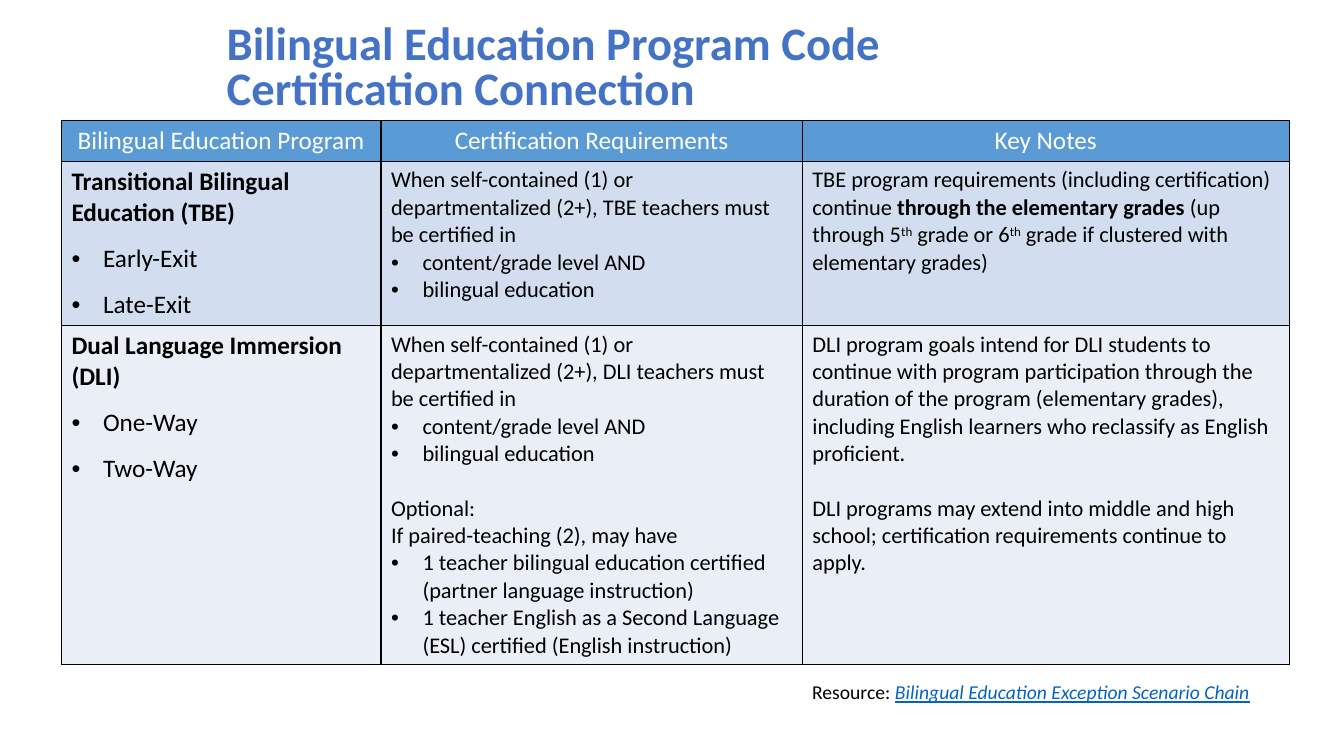
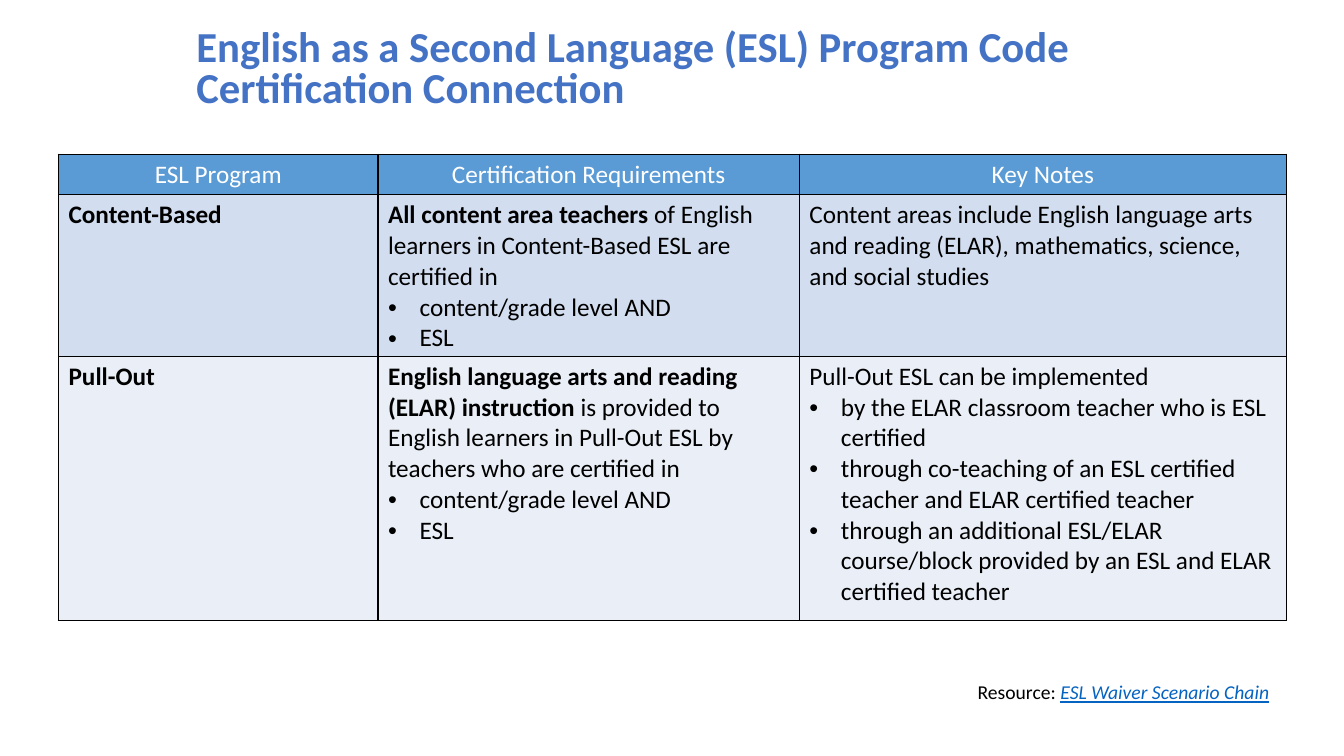
import pptx
import pptx.dml.color
import pptx.enum.text
import pptx.oxml
import pptx.oxml.ns
import pptx.util

Pt = pptx.util.Pt
RGBColor = pptx.dml.color.RGBColor
MSO_ANCHOR = pptx.enum.text.MSO_ANCHOR
PP_ALIGN = pptx.enum.text.PP_ALIGN

TITLE_BLUE = RGBColor(0x44, 0x72, 0xC4)
HEADER_BLUE = RGBColor(0x5B, 0x9B, 0xD5)
BAND_FILLS = (RGBColor(0xD2, 0xDE, 0xEF), RGBColor(0xEA, 0xEF, 0xF7))
LINK_BLUE = RGBColor(0x05, 0x63, 0xC1)
BLACK = RGBColor(0, 0, 0)
WHITE = RGBColor(255, 255, 255)

FONT_NAME = "Calibri"
COLUMN_WIDTHS = (228.2, 301, 347.8)
BULLET_INDENT = 22.5
BLANK_LINE = {"space_before": Pt(19.5)}
LOOSE = {"line_spacing": 1.5}
BOLD = {"bold": True}
LINK = {"color": LINK_BLUE, "italic": True, "underline": True}
SUPERSCRIPT = {"baseline": "30000"}


def set_values(target, values):
    """Set each named attribute of the target."""
    for name, value in values.items():
        setattr(target, name, value)


def line(*runs, bullet=False, **layout):
    """Describe a paragraph made of plain strings and (text, style) pairs."""
    pairs = [(run, {}) if isinstance(run, str) else run for run in runs]
    return {"runs": pairs, "bullet": bullet, "layout": layout}


def bullets(*texts, **layout):
    """Describe one bulleted paragraph for each text."""
    return [line(text, bullet=True, **layout) for text in texts]


def add_bullet(paragraph):
    """Give the paragraph a round bullet and a hanging indent."""
    properties = paragraph._p.get_or_add_pPr()
    properties.set("marL", str(Pt(BULLET_INDENT)))
    properties.set("indent", str(-Pt(BULLET_INDENT)))
    for tag, attribute, value in (("buFont", "typeface", "Arial"), ("buChar", "char", "•")):
        element = pptx.oxml.parse_xml(f'<a:{tag} {pptx.oxml.ns.nsdecls("a")} {attribute}="{value}"/>')
        properties.append(element)


def write_lines(text_frame, lines, **defaults):
    """Fill the text frame with the described paragraphs."""
    for index, content in enumerate(lines):
        paragraph = text_frame.add_paragraph() if index else text_frame.paragraphs[0]
        if content["bullet"]:
            add_bullet(paragraph)
        set_values(paragraph, content["layout"])
        for text, style in content["runs"]:
            run = paragraph.add_run()
            run.text = text
            values = {"name": FONT_NAME, "bold": False, **defaults, **style}
            run.font.color.rgb = values.pop("color")
            baseline = values.pop("baseline", None)
            set_values(run.font, values)
            if baseline:
                run._r.get_or_add_rPr().set("baseline", baseline)


def add_text(slide, box, lines, anchor=MSO_ANCHOR.TOP, **defaults):
    """Place a wrapping text box that fills the given box."""
    text_frame = slide.shapes.add_textbox(*map(Pt, box)).text_frame
    set_values(text_frame, {"word_wrap": True, "vertical_anchor": anchor})
    write_lines(text_frame, lines, **defaults)


def add_title(slide, box, texts, size, anchor):
    """Place the two-line slide title."""
    lines = [line(text, line_spacing=0.8) for text in texts]
    add_text(slide, box, lines, anchor, size=Pt(size), color=TITLE_BLUE, bold=True)


def add_resource(slide, box, name):
    """Place the resource line at the foot of the slide."""
    add_text(slide, box, [line("Resource: ", (name, LINK))], size=Pt(14), color=BLACK)


def style_cell(cell, fill_color):
    """Draw black borders around the cell and fill it."""
    properties = cell._tc.get_or_add_tcPr()
    for side in "LRTB":
        properties.append(pptx.oxml.parse_xml(
            f'<a:ln{side} {pptx.oxml.ns.nsdecls("a")} w="{Pt(1)}">'
            f'<a:solidFill><a:srgbClr val="{BLACK}"/></a:solidFill></a:ln{side}>'))
    cell.fill.solid()
    cell.fill.fore_color.rgb = fill_color


def add_program_table(slide, origin, row_heights, headings, rows, sizes):
    """Place the program table with its top left corner at the origin."""
    box = (*origin, sum(COLUMN_WIDTHS), sum(row_heights))
    table = slide.shapes.add_table(len(rows) + 1, len(headings), *map(Pt, box)).table
    set_values(table, {"first_row": False, "horz_banding": False})
    for column, width in zip(table.columns, COLUMN_WIDTHS):
        column.width = Pt(width)
    for row, height in zip(table.rows, row_heights):
        row.height = Pt(height)
    for index, heading in enumerate(headings):
        cell = table.cell(0, index)
        style_cell(cell, HEADER_BLUE)
        write_lines(cell.text_frame, [line(heading, alignment=PP_ALIGN.CENTER)], size=Pt(18), color=WHITE)
    for row_index, (row, fill_color) in enumerate(zip(rows, BAND_FILLS), 1):
        for column_index, (lines, size) in enumerate(zip(row, sizes)):
            cell = table.cell(row_index, column_index)
            style_cell(cell, fill_color)
            write_lines(cell.text_frame, lines, size=Pt(size), color=BLACK)


def certified_lines(program):
    """Describe the requirements shared by the bilingual programs."""
    return [
        line(f"When self-contained (1) or departmentalized (2+), {program} teachers must be certified in"),
        *bullets("content/grade level AND", "bilingual education"),
    ]


def build_bilingual_slide(slide):
    """Build the slide on bilingual education programs."""
    add_title(slide, (154.8, 13.7, 647.3, 71.3),
              ("Bilingual Education Program Code", "Certification Connection"), 33.3, MSO_ANCHOR.BOTTOM)
    rows = (
        (
            [line(("Transitional Bilingual Education (TBE)", BOLD)),
             *bullets("Early-Exit", "Late-Exit", **LOOSE)],
            certified_lines("TBE"),
            [line("TBE program requirements (including certification) continue ",
                  ("through the elementary grades ", BOLD), "(up through 5", ("th", SUPERSCRIPT),
                  " grade or 6", ("th", SUPERSCRIPT), " grade if clustered with elementary grades)")],
        ),
        (
            [line(("Dual Language Immersion (DLI)", BOLD)),
             *bullets("One-Way", "Two-Way", **LOOSE)],
            [*certified_lines("DLI"),
             line("Optional:", **BLANK_LINE),
             line("If paired-teaching (2), may have"),
             *bullets("1 teacher bilingual education certified (partner language instruction)",
                      "1 teacher English as a Second Language (ESL) certified (English instruction)")],
            [line("DLI program goals intend for DLI students to continue with program participation through "
                  "the duration of the program (elementary grades), including English learners who "
                  "reclassify as English proficient."),
             line("DLI programs may extend into middle and high school; certification requirements "
                  "continue to apply.", **BLANK_LINE)],
        ),
    )
    headings = ("Bilingual Education Program", "Certification Requirements", "Key Notes")
    add_program_table(slide, (43.9, 86.2), (29.2, 117.2, 242), headings, rows, (18, 16, 16))
    add_resource(slide, (573, 482.4, 343.5, 24.5), "Bilingual Education Exception Scenario Chain")


def build_esl_slide(slide):
    """Build the slide on English as a second language programs."""
    add_title(slide, (133.2, 15.1, 766, 71.3),
              ("English as a Second Language (ESL) Program Code", "Certification Connection"),
              30.5, MSO_ANCHOR.MIDDLE)
    requirements = bullets("content/grade level AND", "ESL")
    rows = (
        (
            [line(("Content-Based", BOLD))],
            [line(("All content area teachers ", BOLD),
                  "of English learners in Content-Based ESL are certified in"), *requirements],
            [line("Content areas include English language arts and reading (ELAR), mathematics, "
                  "science, and social studies")],
        ),
        (
            [line(("Pull-Out", BOLD))],
            [line(("English language arts and reading (ELAR) instruction ", BOLD),
                  "is provided to English learners in Pull-Out ESL by teachers who are certified in"),
             *requirements],
            [line("Pull-Out ESL can be implemented"),
             *bullets("by the ELAR classroom teacher who is ESL certified",
                      "through co-teaching of an ESL certified teacher and ELAR certified teacher",
                      "through an additional ESL/ELAR course/block provided by an ESL and ELAR "
                      "certified teacher")],
        ),
    )
    headings = ("ESL Program", "Certification Requirements", "Key Notes")
    add_program_table(slide, (41.8, 110.2), (29, 115, 189), headings, rows, (18, 18, 18))
    add_resource(slide, (691.2, 482.4, 230, 24.5), "ESL Waiver Scenario Chain")


def main():
    """Build and save the presentation."""
    presentation = pptx.Presentation()
    set_values(presentation, {"slide_width": Pt(960), "slide_height": Pt(540)})
    for build in (build_bilingual_slide, build_esl_slide):
        build(presentation.slides.add_slide(presentation.slide_layouts[6]))
    presentation.save("out.pptx")


if __name__ == "__main__":
    main()
